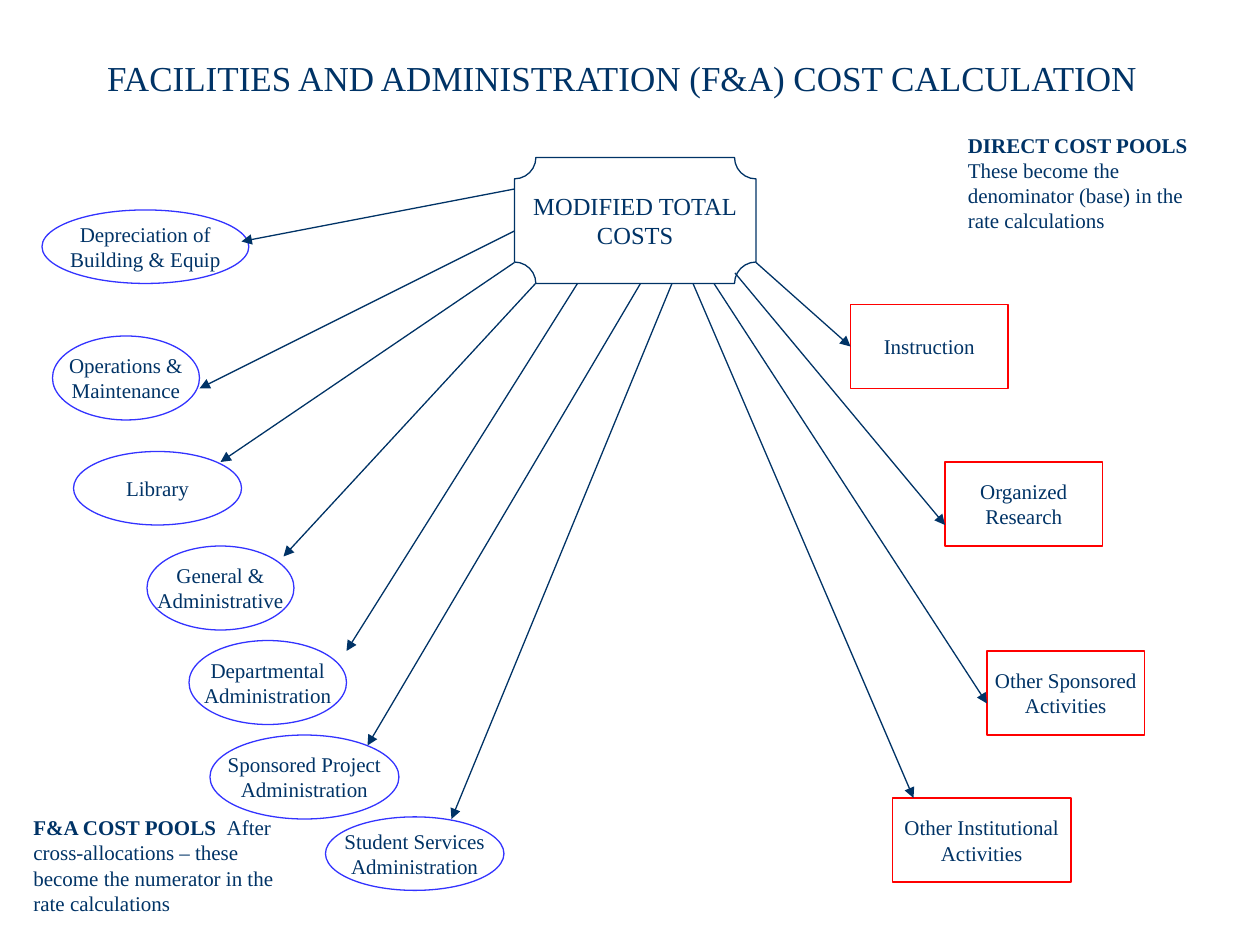
from lxml import etree
from pptx import Presentation
from pptx.dml.color import RGBColor
from pptx.enum.shapes import MSO_CONNECTOR, MSO_SHAPE
from pptx.enum.text import MSO_ANCHOR, MSO_AUTO_SIZE, PP_ALIGN
from pptx.oxml.ns import qn
from pptx.util import Pt

SCALE = 7620
FONT = "Times New Roman"
NAVY, BLUE, RED, WHITE = "003366", "3333FF", "FF0000", "FFFFFF"
OVAL, RECT, PLAQUE = MSO_SHAPE.OVAL, MSO_SHAPE.RECTANGLE, MSO_SHAPE.PLAQUE
STRAIGHT = MSO_CONNECTOR.STRAIGHT
TOP, MIDDLE = MSO_ANCHOR.TOP, MSO_ANCHOR.MIDDLE
LEFT, CENTER = PP_ALIGN.LEFT, PP_ALIGN.CENTER
GROW, FIXED = MSO_AUTO_SIZE.SHAPE_TO_FIT_TEXT, MSO_AUTO_SIZE.NONE
LEFT_SIDE = 1

FA_POOLS = [
    (["Depreciation of", "Building & Equip"], (40, 200, 197, 70), (490, 180), (230, 230)),
    (["Operations &", "Maintenance"], (50, 320, 140, 80), (490, 220), (190, 370)),
    (["Library"], (70, 430, 160, 70), (490, 250), (210, 440)),
    (["General &", "Administrative"], (140, 520, 140, 80), (510, 270), (270, 530)),
    (["Departmental", "Administration"], (180, 610, 150, 80), (550, 270), (330, 620)),
    (["Sponsored Project", "Administration"], (200, 700, 180, 80), (610, 270), (350, 710)),
    (["Student Services", "Administration"], (310, 778, 170, 70), (640, 270), (430, 780)),
]
DIRECT_POOLS = [
    (["Instruction"], (810, 290, 150, 80), (720, 250), (810, 330)),
    (["Organized", "Research"], (900, 440, 150, 80), (700, 260), (900, 500)),
    (["Other Sponsored", "Activities"], (940, 620, 150, 80), (680, 270), (940, 670)),
    (["Other Institutional", "Activities"], (850, 760, 170, 80), (660, 270), (870, 760)),
]
NOTES = [
    ("DIRECT COST POOLS  ",
     "These become the denominator (base) in the rate calculations",
     (910, 120, 250, 108)),
    ("F&A COST POOLS  ",
     "After cross-allocations – these become the numerator in the rate calculations",
     (20, 770, 270, 108)),
]


def px(*vals):
    """Turn px lengths into EMU."""
    return [val * SCALE for val in vals]


def color(code):
    """Give the colour of a hex string."""
    return RGBColor.from_string(code)


def add_run(para, text, size, bold=False):
    """Add one formatted run to a paragraph."""
    run = para.add_run()
    run.text = text
    font = run.font
    font.name, font.size, font.bold = FONT, Pt(size), bold
    font.color.rgb = color(NAVY)


def set_title(slide, text, box):
    """Place and format the title."""
    title = slide.shapes.title
    title.left, title.top, title.width, title.height = px(*box)
    frame = title.text_frame
    frame.vertical_anchor, frame.auto_size = TOP, FIXED
    para = frame.paragraphs[0]
    para.alignment = LEFT
    add_run(para, text, 20)


def add_node(slide, kind, lines, box, edge, size=12):
    """Add an outlined shape with centred lines of text."""
    node = slide.shapes.add_shape(kind, *px(*box))
    node.shadow.inherit = False
    node.fill.solid()
    node.fill.fore_color.rgb = color(WHITE)
    node.line.color.rgb = color(edge)
    node.line.width = Pt(0.75)
    frame = node.text_frame
    frame.word_wrap, frame.vertical_anchor = False, MIDDLE
    for i, line in enumerate(lines):
        para = frame.add_paragraph() if i else frame.paragraphs[0]
        para.alignment = CENTER
        add_run(para, line, size)
    return node


def add_arrow(slide, start, end, node, box):
    """Add an arrow, joined to the node at the middle of its left side."""
    arrow = slide.shapes.add_connector(STRAIGHT, *px(*start, *end))
    left, top, _, height = box
    if end == (left, top + height // 2):
        arrow.end_connect(node, LEFT_SIDE)
    arrow.line.color.rgb = color(NAVY)
    arrow.line.width = Pt(0.75)
    etree.SubElement(arrow.line._get_or_add_ln(), qn("a:tailEnd"), type="triangle")
    etree.SubElement(arrow._element.spPr, qn("a:effectLst"))


def add_pools(slide, kind, edge, pools):
    """Add one side's cost pools and the arrows that lead to them."""
    nodes = [add_node(slide, kind, lines, box, edge) for lines, box, _, _ in pools]
    for node, (_, box, start, end) in zip(nodes, pools):
        add_arrow(slide, start, end, node, box)


def add_note(slide, head, body, box):
    """Add a note with a bold heading run."""
    frame = slide.shapes.add_textbox(*px(*box)).text_frame
    frame.word_wrap, frame.auto_size = True, GROW
    para = frame.paragraphs[0]
    add_run(para, head, 12, True)
    add_run(para, body, 12)


def main():
    """Build the slide and save it."""
    prs = Presentation()
    prs.slide_width, prs.slide_height = px(1200, 900)
    slide = prs.slides.add_slide(prs.slide_layouts[5])
    set_title(slide, "FACILITIES AND ADMINISTRATION (F&A) COST CALCULATION",
              (90, 48, 1030, 52))
    total = add_node(slide, PLAQUE, ["MODIFIED TOTAL", "COSTS"],
                     (490, 150, 230, 120), NAVY, 14)
    total.adjustments[0] = 0.17
    add_pools(slide, OVAL, BLUE, FA_POOLS)
    add_pools(slide, RECT, RED, DIRECT_POOLS)
    for note in NOTES:
        add_note(slide, *note)
    prs.save("out.pptx")


if __name__ == "__main__":
    main()
